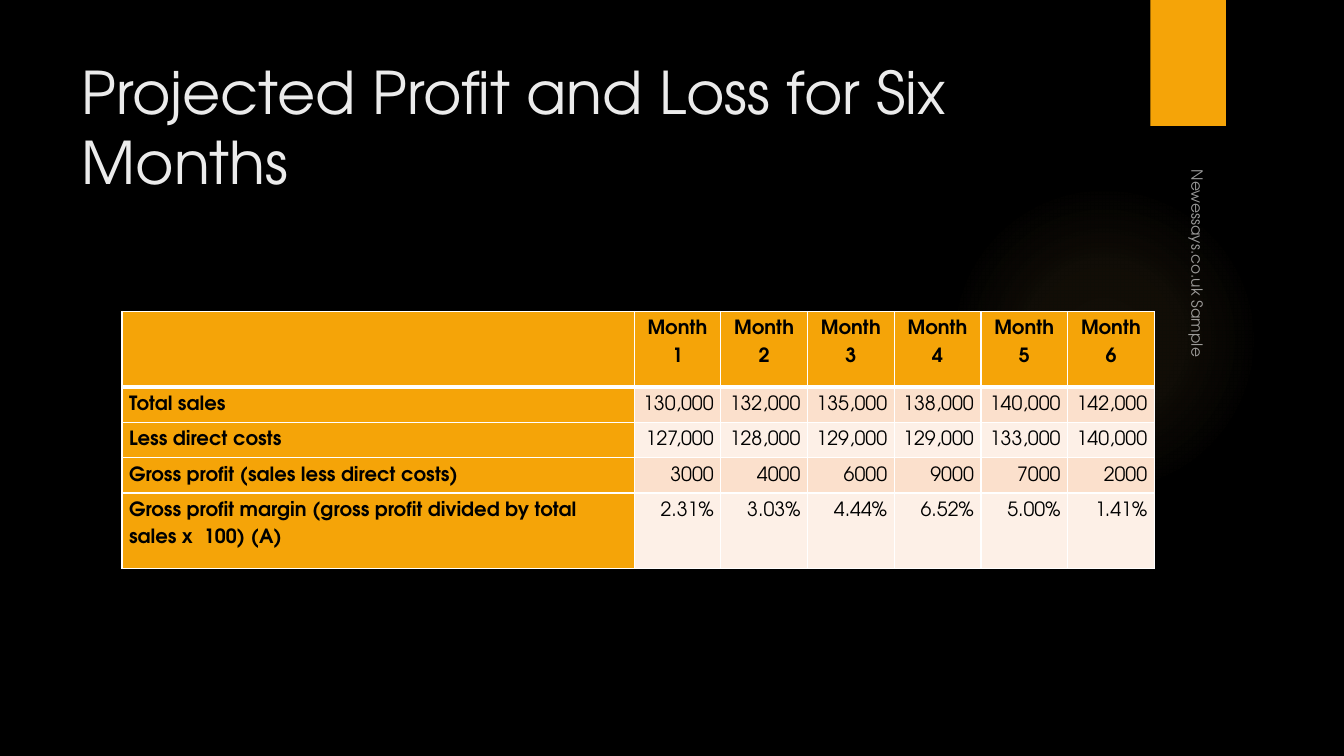
from lxml import etree
from pptx import Presentation
from pptx.dml.color import RGBColor
from pptx.enum.shapes import MSO_SHAPE
from pptx.enum.text import MSO_ANCHOR, PP_ALIGN
from pptx.oxml import parse_xml
from pptx.oxml.ns import nsdecls, qn
from pptx.util import Inches, Pt

OVAL, RECT = MSO_SHAPE.OVAL, MSO_SHAPE.RECTANGLE
TOP, BOTTOM = MSO_ANCHOR.TOP, MSO_ANCHOR.BOTTOM
LEFT, CENTER, RIGHT = PP_ALIGN.LEFT, PP_ALIGN.CENTER, PP_ALIGN.RIGHT

FONT = "TeX Gyre Adventor"
BLACK = RGBColor(0x00, 0x00, 0x00)
WHITE = RGBColor(0xFF, 0xFF, 0xFF)
TITLE_GREY = RGBColor(0xEB, 0xEB, 0xEB)
ORANGE = RGBColor(0xF5, 0xA4, 0x08)
GLOW = RGBColor(0xFA, 0xC9, 0x6A)
BAND_DARK = RGBColor(0xFB, 0xE0, 0xCC)
BAND_LIGHT = RGBColor(0xFD, 0xF0, 0xE7)

COL_WIDTHS = [5.08] + [0.86] * 6
ROW_HEIGHTS = [0.75, 0.35, 0.35, 0.35, 0.75]
ROWS = [
    [""] + [f"Month {n}" for n in range(1, 7)],
    ["Total sales", "130,000", "132,000", "135,000", "138,000", "140,000", "142,000"],
    ["Less direct costs", "127,000", "128,000", "129,000", "129,000", "133,000", "140,000"],
    ["Gross profit (sales less direct costs)", "3000", "4000", "6000", "9000", "7000", "2000"],
    ["Gross profit margin (gross profit divided by total sales x  100) (A)",
     "2.31%", "3.03%", "4.44%", "6.52%", "5.00%", "1.41%"],
]


def add_text(text, left, top, width, height, size, color, anchor):
    sp = slide.shapes.add_textbox(Inches(left), Inches(top), Inches(width), Inches(height))
    tf = sp.text_frame
    tf.word_wrap = True
    tf.vertical_anchor = anchor
    p = tf.paragraphs[0]
    p.text = text
    p.font.name, p.font.size = FONT, Pt(size)
    p.font.color.rgb = color
    return sp


def set_borders(cell, bottom_width):
    """Draw white borders of 1 pt, with the bottom one at its own width."""
    tc_pr = cell._tc.get_or_add_tcPr()
    for side, width in (("L", 1), ("R", 1), ("T", 1), ("B", bottom_width)):
        ln = etree.SubElement(tc_pr, qn(f"a:ln{side}"), w=str(Pt(width)))
        fill = etree.SubElement(ln, qn("a:solidFill"))
        etree.SubElement(fill, qn("a:srgbClr"), val=str(WHITE))


prs = Presentation()
prs.slide_width, prs.slide_height = Inches(13.33), Inches(7.5)
slide = prs.slides.add_slide(prs.slide_layouts[6])
slide.background.fill.solid()
slide.background.fill.fore_color.rgb = BLACK

# Soft glow and corner tab
glow = slide.shapes.add_shape(OVAL, Inches(9.41), Inches(1.83), Inches(3.08), Inches(3.08))
glow.shadow.inherit = False
glow.line.fill.background()
stops = "".join(
    f'<a:gs pos="{pos * 1000}"><a:srgbClr val="{GLOW}"><a:alpha val="{alpha * 1000}"/></a:srgbClr></a:gs>'
    for pos, alpha in ((0, 7), (36, 6), (69, 0), (100, 0)))
glow._element.spPr.find(qn("a:prstGeom")).addnext(parse_xml(
    f'<a:gradFill {nsdecls("a")}><a:gsLst>{stops}</a:gsLst><a:path path="circle">'
    '<a:fillToRect l="50000" t="50000" r="50000" b="50000"/></a:path></a:gradFill>'))

tab = slide.shapes.add_shape(RECT, Inches(11.41), Inches(0), Inches(0.75), Inches(1.25))
tab.shadow.inherit = False
tab.fill.solid()
tab.fill.fore_color.rgb = ORANGE
tab.line.fill.background()

add_text("Projected Profit and Loss for Six Months", 0.71, 0.5, 10.29, 1.53, 42, TITLE_GREY, TOP)

# Profit and loss table
table = slide.shapes.add_table(len(ROWS), len(COL_WIDTHS), Inches(1.21), Inches(3.09),
                               Inches(sum(COL_WIDTHS)), Inches(sum(ROW_HEIGHTS))).table
table.horz_banding = False
for column, width in zip(table.columns, COL_WIDTHS):
    column.width = Inches(width)
for row, height in zip(table.rows, ROW_HEIGHTS):
    row.height = Inches(height)

for i, values in enumerate(ROWS):
    for j, value in enumerate(values):
        is_heading = i == 0 or j == 0
        cell = table.cell(i, j)
        cell.margin_left = cell.margin_right = Inches(0.07)
        cell.margin_top = cell.margin_bottom = Inches(0)
        set_borders(cell, 3 if i == 0 else 1)
        cell.fill.solid()
        cell.fill.fore_color.rgb = ORANGE if is_heading else BAND_DARK if i % 2 else BAND_LIGHT
        p = cell.text_frame.paragraphs[0]
        p.text = value
        p.alignment = CENTER if i == 0 else LEFT if j == 0 else RIGHT
        p.line_spacing = 1.5
        p.font.name, p.font.size, p.font.bold = FONT, Pt(14), is_heading
        p.font.color.rgb = BLACK

# Footer running down the right edge
footer = add_text("Newessays.co.uk Sample", 9.79, 3.53, 4.22, 0.33, 11, WHITE, BOTTOM)
footer.rotation = 90
for color in footer._element.iter(qn("a:srgbClr")):
    etree.SubElement(color, qn("a:alpha"), val="60000")

prs.save("out.pptx")
